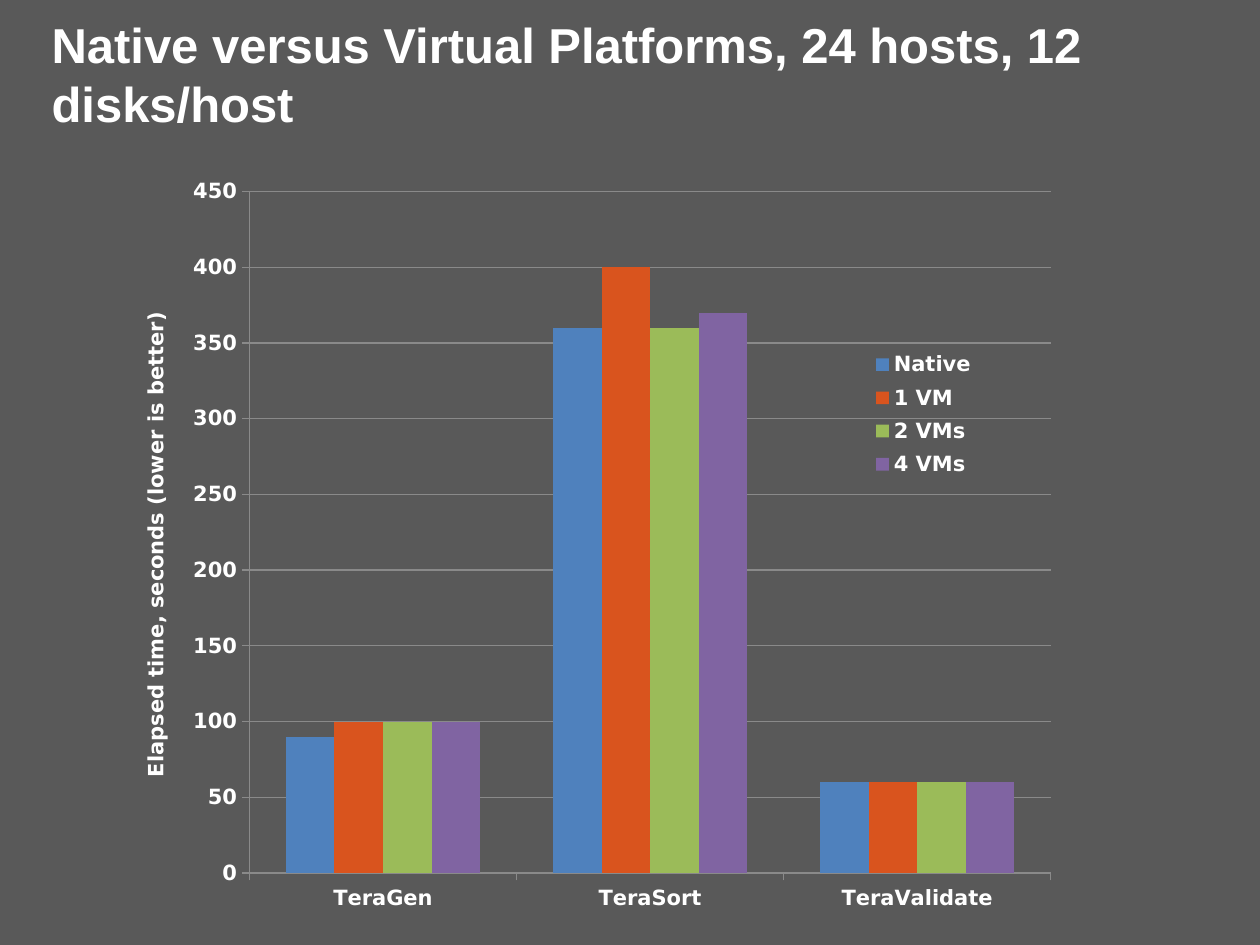
from pptx import Presentation
from pptx.chart.data import CategoryChartData
from pptx.dml.color import RGBColor
from pptx.enum import chart as ch, text
from pptx.oxml import parse_xml
from pptx.oxml.ns import nsdecls
from pptx.util import Inches, Pt

BACKGROUND = RGBColor(0x59, 0x59, 0x59)
WHITE = RGBColor(0xFF, 0xFF, 0xFF)
GRID = RGBColor(0x8A, 0x8A, 0x8A)
BLUE = RGBColor(0x4F, 0x81, 0xBD)
ORANGE = RGBColor(0xD9, 0x54, 0x1E)
GREEN = RGBColor(0x9B, 0xBB, 0x59)
PURPLE = RGBColor(0x80, 0x64, 0xA2)

CHART_WIDTH, CHART_HEIGHT = Inches(7.5), Inches(6)
BENCHMARKS = ["TeraGen", "TeraSort", "TeraValidate"]
PLATFORMS = [
    ("Native", (90, 360, 60), BLUE),
    ("1 VM", (100, 400, 60), ORANGE),
    ("2 VMs", (100, 360, 60), GREEN),
    ("4 VMs", (100, 370, 60), PURPLE),
]


def style_font(font, size=12, name="DejaVu Sans", color=WHITE, bold=True):
    """Apply size, typeface, colour and weight to a font."""
    font.size = Pt(size)
    font.name = name
    font.bold = bold
    font.color.rgb = color


def write_text(frame, content, **font_format):
    """Put one formatted paragraph into a text frame."""
    run = frame.paragraphs[0].add_run()
    run.text = content
    style_font(run.font, **font_format)


def add_heading(slide, content):
    """Add the slide heading."""
    heading = slide.shapes.add_textbox(Inches(0.41), Inches(0.19), Inches(9.27), Inches(0.79))
    frame = heading.text_frame
    frame.word_wrap = True
    frame.vertical_anchor = text.MSO_ANCHOR.MIDDLE
    frame.margin_left = frame.margin_right = frame.margin_top = frame.margin_bottom = 0
    write_text(frame, content, size=28, name="Arial")


def make_layout(left, top, width, height, inner=False):
    """Return a manual layout from lengths measured inside the chart."""
    target = '<c:layoutTarget val="inner"/>' if inner else ""
    return parse_xml(
        f'<c:layout {nsdecls("c")}><c:manualLayout>{target}'
        '<c:xMode val="edge"/><c:yMode val="edge"/>'
        f'<c:x val="{left / CHART_WIDTH}"/><c:y val="{top / CHART_HEIGHT}"/>'
        f'<c:w val="{width / CHART_WIDTH}"/><c:h val="{height / CHART_HEIGHT}"/>'
        "</c:manualLayout></c:layout>"
    )


def replace_layout(parent, layout, index):
    """Swap any layout of a chart part for the given one."""
    for old in parent.findall(layout.tag):
        parent.remove(old)
    parent.insert(index, layout)


def style_axis(axis):
    """Format an axis line, its tick marks and its labels."""
    axis.major_tick_mark = ch.XL_TICK_MARK.OUTSIDE
    axis.format.line.color.rgb = GRID
    axis.format.line.width = Pt(0.75)
    style_font(axis.tick_labels.font)


def add_legend(chart):
    """Lay the legend over the right part of the plot."""
    chart.has_legend = True
    legend = chart.legend
    legend.position = ch.XL_LEGEND_POSITION.RIGHT
    legend.include_in_layout = False
    style_font(legend.font)
    layout = make_layout(Inches(5.64), Inches(1.46), Inches(1.2), Inches(1.12))
    replace_layout(legend._element, layout, 1)


def add_benchmark_chart(slide):
    """Add the clustered columns of elapsed time per platform."""
    data = CategoryChartData(number_format="General")
    data.categories = BENCHMARKS
    for platform, seconds, _ in PLATFORMS:
        data.add_series(platform, seconds)
    chart = slide.shapes.add_chart(
        ch.XL_CHART_TYPE.COLUMN_CLUSTERED,
        Inches(1.09), Inches(1.27), CHART_WIDTH, CHART_HEIGHT, data,
    ).chart
    chart.has_title = False
    style_font(chart.font, size=10, name="Arial", bold=False)

    plot = chart.plots[0]
    plot.gap_width = 150
    plot.overlap = 0
    plot.vary_by_categories = False
    for series, (_, _, color) in zip(plot.series, PLATFORMS):
        series.format.fill.solid()
        series.format.fill.fore_color.rgb = color

    style_axis(chart.category_axis)
    times = chart.value_axis
    style_axis(times)
    times.minimum_scale, times.maximum_scale, times.major_unit = 0, 450, 50
    times.has_major_gridlines = True
    times.major_gridlines.format.line.color.rgb = GRID
    times.major_gridlines.format.line.width = Pt(0.75)
    write_text(times.axis_title.text_frame, "Elapsed time, seconds (lower is better)")

    add_legend(chart)
    layout = make_layout(Inches(0.89), Inches(0.25), Inches(6.36), Inches(5.41), inner=True)
    replace_layout(chart._chartSpace.chart.plotArea, layout, 0)


def main():
    """Build and save the slide."""
    deck = Presentation()
    deck.slide_width, deck.slide_height = Inches(10), Inches(7.5)
    slide = deck.slides.add_slide(deck.slide_layouts[6])
    slide.background.fill.solid()
    slide.background.fill.fore_color.rgb = BACKGROUND
    add_heading(slide, "Native versus Virtual Platforms, 24 hosts, 12 disks/host")
    add_benchmark_chart(slide)
    deck.save("out.pptx")


if __name__ == "__main__":
    main()
